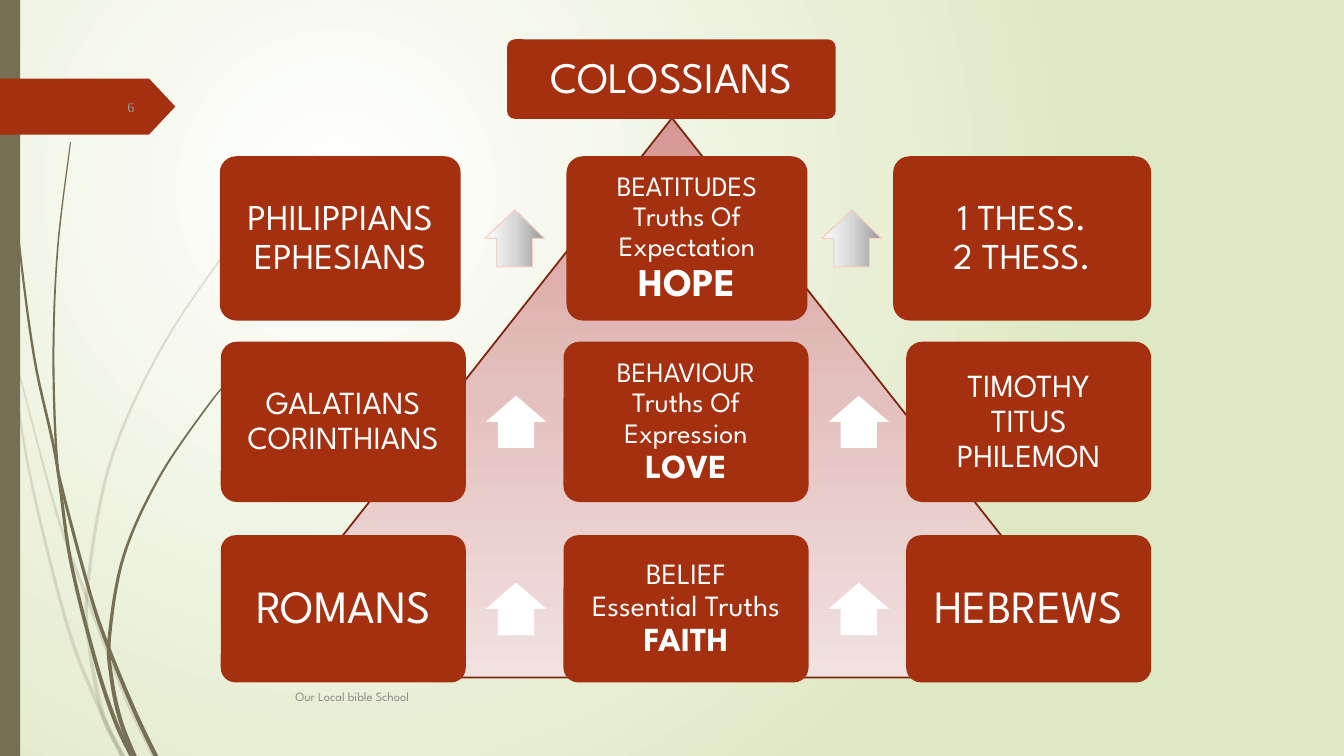
import pptx
import pptx.util
import pptx.oxml
import pptx.oxml.ns
import pptx.dml.color
import pptx.enum.shapes
import pptx.enum.text

KIND = pptx.enum.shapes.MSO_SHAPE
ALIGN = pptx.enum.text.PP_ALIGN
MIDDLE = pptx.enum.text.MSO_ANCHOR.MIDDLE
QN = pptx.oxml.ns.qn
WIDE, HIGH = pptx.util.Inches(13.33), pptx.util.Inches(7.5)
RUST, OLIVE, WHITE = "A53010", "766F54", "FFFFFF"
SANS, SERIF = "League Spartan", "Times New Roman"

STEP = 25.5  # distance between the columns
EVEN = [(16.43 + STEP * i, 18.23) for i in range(3)]
TOP = [(16.35, 17.93), (42.15, 17.93), (66.45, 19.2)]
GREY = [(0, "979797"), (50, "D7D7D7"), (100, WHITE)]
PINK = [(0, "D69793"), (50, "E4C1BF"), (100, "F1E1E0")]
DOWN = '<a:lin ang="5400000" scaled="0"/>'
UP = '<a:lin ang="16200000" scaled="0"/>'
GLOW = ('<a:path path="circle"><a:fillToRect l="50000" t="50000" '
        'r="100000" b="100000"/></a:path>')


def truths(head, line, word, size, big):
    return [(head, size, False), (line, size, False), (word, big, True)]


def books(size, *names):
    return [(name, size, False) for name in names]


# top, height, columns, arrow centres, arrow size, arrow shading, (inset, lines) per box
ROWS = [
    (20.67, 21.73, TOP, (38.3, 63.38), (4.25, 7.87), GREY, [
        (0.11, books(26, "PHILIPPIANS", "EPHESIANS")),
        (0.08, truths("BEATITUDES", "Truths Of Expectation", "HOPE", 20, 28)),
        (0.11, books(26, "1 THESS.", "2 THESS."))]),
    (45.2, 21.2, EVEN, (38.4, 38.4 + STEP), (3.9, 8), None, [
        (0.1, books(23, "GALATIANS", "CORINTHIANS")),
        (0.08, truths("BEHAVIOUR", "Truths Of Expression", "LOVE", 20, 24)),
        (0.1, books(23, "TIMOTHY", "TITUS", "PHILEMON"))]),
    (70.8, 19.47, EVEN, (38.4, 38.4 + STEP), (3.9, 8), None, [
        (0.14, books(33, "ROMANS")),
        (0.09, truths("BELIEF", "Essential Truths", "FAITH", 21, 24)),
        (0.14, books(33, "HEBREWS"))]),
]

# opacity and the points along the middle of each blade of grass
GRASS = [
    (20, [(0, 38.5), (0.8, 46.5), (2.2, 62.6), (5, 82.7), (7.3, 93.3), (9.1, 100)]),
    (20, [(1.1, 47), (2.7, 58), (4.5, 69.5), (6.45, 79), (9.4, 92.4), (11.45, 100)]),
    (20, [(23.4, 20.4), (20.1, 26.3), (17.1, 32.6), (11.9, 46.4), (8.15, 61.5),
          (6.5, 77.9), (6.7, 86.1), (7.7, 94.8), (9.15, 100)]),
    (100, [(0.3, 0), (0.55, 14.6), (1.35, 31), (2.55, 47.3), (4.15, 60.5),
           (5.25, 74.1), (7.15, 87.7), (8.6, 95.5), (9.8, 100)]),
    (100, [(5.25, 18.8), (4.3, 32.7), (3.98, 46.5), (4.2, 59.9), (4.7, 65.2),
           (6.75, 78.8), (8.1, 85.8), (10.05, 94.2), (11.6, 100)]),
    (100, [(19.5, 45.9), (17.3, 49.8), (15.3, 54.1), (11.8, 63.3), (9.2, 73.6),
           (8.15, 84.2), (8.3, 89.7), (8.95, 95.2), (10, 100)]),
]


def across(share):
    return round(WIDE * share / 100)


def down(share):
    return round(HIGH * share / 100)


def place(x, y, w, h):
    """Turn hundredths of the slide into lengths."""
    return across(x), down(y), across(w), down(h)


def hue(code):
    return pptx.dml.color.RGBColor.from_string(code)


def paint(shape, code):
    shape.shadow.inherit = False
    shape.fill.solid()
    shape.fill.fore_color.rgb = hue(code)
    shape.line.fill.background()


def shade(root, stops, course):
    """Swap the first solid fill under root for a gradient."""
    marks = "".join(f'<a:gs pos="{pos * 1000}"><a:srgbClr val="{code}"/></a:gs>'
                    for pos, code in stops)
    grad = pptx.oxml.parse_xml(
        f'<a:gradFill {pptx.oxml.ns.nsdecls("a")} rotWithShape="1">'
        f'<a:gsLst>{marks}</a:gsLst>{course}</a:gradFill>')
    solid = next(root.iter(QN("a:solidFill")))
    solid.getparent().replace(solid, grad)


def edge(shape, code, width):
    shape.line.color.rgb = hue(code)
    shape.line.width = pptx.util.Pt(width)


def draw(slide, kind, area, code, *bends):
    shape = slide.shapes.add_shape(kind, *place(*area))
    paint(shape, code)
    for i, bend in enumerate(bends):
        shape.adjustments[i] = bend
    return shape


def write(frame, lines, align, code, font):
    """Put lines of (words, size, bold) in one paragraph."""
    frame.word_wrap = True
    frame.vertical_anchor = MIDDLE
    para = frame.paragraphs[0]
    para.alignment = align
    for i, (words, size, bold) in enumerate(lines):
        if i:
            para.add_line_break()
        run = para.add_run()
        run.text = words
        run.font.size = pptx.util.Pt(size)
        run.font.bold = bold
        run.font.name = font
        run.font.color.rgb = hue(code)
    return para


def label(slide, area, words, size, align, code, font):
    box = slide.shapes.add_textbox(*place(*area))
    write(box.text_frame, [(words, size, False)], align, code, font)


def card(slide, area, inset, lines):
    frame = draw(slide, KIND.ROUNDED_RECTANGLE, area, RUST, 0.1).text_frame
    gap = pptx.util.Inches(inset)
    frame.margin_left = frame.margin_right = gap
    frame.margin_top = frame.margin_bottom = gap
    write(frame, lines, ALIGN.CENTER, WHITE, SANS).line_spacing = 0.9


def arrow(slide, x, y, size, stops):
    """Draw an upward arrow centred on x, y."""
    w, h = size
    shape = draw(slide, KIND.RIGHT_ARROW, (x - w / 2, y - h / 2, w, h), WHITE, 0.6, 0.5)
    shape.rotation = 270
    if stops:
        shade(shape.element.spPr, stops, UP)
        edge(shape, "F9CFC3", 0.75)


def smooth(knots, parts=8):
    """Join the knots by a Catmull-Rom curve."""
    ends = [knots[0], *knots, knots[-1]]
    curve = []
    for a, b, c, d in zip(ends, ends[1:], ends[2:], ends[3:]):
        for t in (i / parts for i in range(parts)):
            curve.append(tuple(
                q + t / 2 * (r - p + t * (2 * p - 5 * q + 4 * r - s
                                          + t * (3 * (q - r) + s - p)))
                for p, q, r, s in zip(a, b, c, d)))
    return curve + [knots[-1]]


def blade(slide, alpha, knots):
    curve = smooth(knots)
    left, right = [], []
    for i, (x, y) in enumerate(curve):
        half = 0.04 + 0.14 * i / len(curve)
        left.append((across(max(x - half, 0)), down(y)))
        right.append((across(x + half), down(y)))
    rim = left + right[::-1]
    pen = slide.shapes.build_freeform(*rim[0])
    pen.add_line_segments(rim[1:])
    shape = pen.convert_to_shape()
    paint(shape, OLIVE)
    if alpha < 100:
        tint = next(shape.element.spPr.iter(QN("a:srgbClr")))
        tint.append(pptx.oxml.parse_xml(
            f'<a:alpha {pptx.oxml.ns.nsdecls("a")} val="{alpha * 1000}"/>'))


def scene(slide):
    """Draw the background, grass, side band and page flag."""
    slide.background.fill.solid()
    slide.background.fill.fore_color.rgb = hue(WHITE)
    shade(slide.element, [(0, WHITE), (100, "DFE8C4")], GLOW)
    for alpha, knots in GRASS:
        blade(slide, alpha, knots)
    draw(slide, KIND.RECTANGLE, (0, 0, 1.5, 100), OLIVE)
    draw(slide, KIND.PENTAGON, (0, 10.4, 13.05, 7.4), RUST, 0.47)


def main():
    deck = pptx.Presentation()
    deck.slide_width, deck.slide_height = WIDE, HIGH
    slide = deck.slides.add_slide(deck.slide_layouts[6])
    scene(slide)
    peak = draw(slide, KIND.ISOSCELES_TRIANGLE, (17.18, 15.6, 65.64, 74), WHITE)
    shade(peak.element.spPr, PINK, DOWN)
    edge(peak, "7A240C", 1.25)
    label(slide, (21.23, 89.47, 62.5, 5.33), "Our Local bible School", 9,
          ALIGN.LEFT, "8C8C8C", SANS)
    label(slide, (4.35, 11.47, 6.38, 5.33), "6", 10, ALIGN.RIGHT, "9B9A98", SERIF)
    for top, tall, cols, mids, size, stops, cards in ROWS:
        for (x, w), (inset, lines) in zip(cols, cards):
            card(slide, (x, top, w, tall), inset, lines)
        for mid in mids:
            arrow(slide, mid, top + tall / 2, size, stops)
    card(slide, (37.73, 5.2, 24.45, 10.53), 0.13, books(31, "COLOSSIANS"))
    deck.save("out.pptx")


if __name__ == "__main__":
    main()
